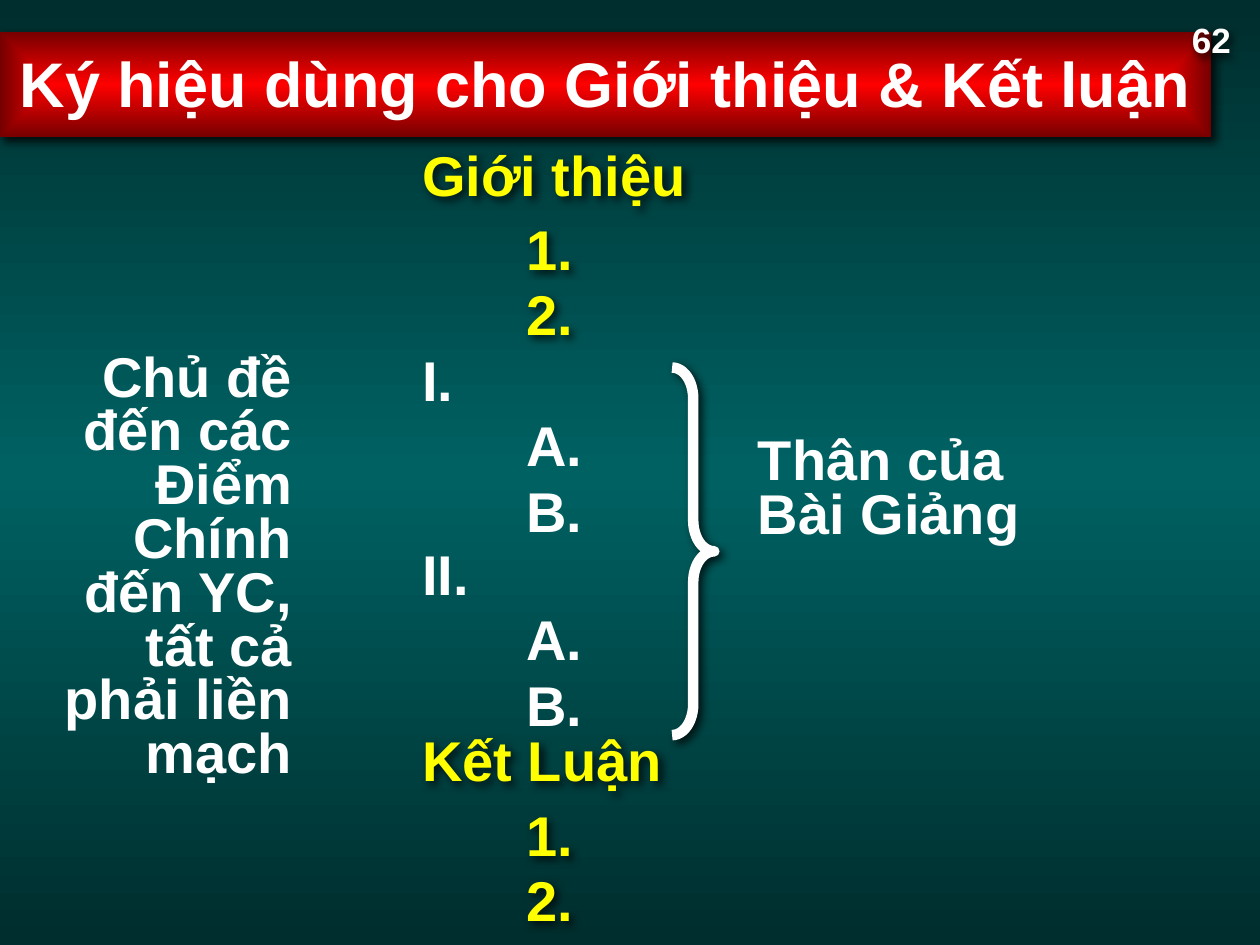
from dataclasses import dataclass

from pptx import Presentation
from pptx import util as u
from pptx.dml.color import RGBColor
from pptx.enum import shapes, text
from pptx.oxml import parse_xml
from pptx.oxml.ns import nsdecls


@dataclass
class Theme:
    font: str = "Arial"
    white: str = "FFFFFF"
    gold: str = "FFFF00"
    dark: str = "002D2D"
    teal: str = "006162"
    red: str = "FF0000"
    wine: str = "760000"
    gray: str = "808080"
    head: int = 36
    main: int = 32
    num: int = 20


look = Theme()
SHADE = (f'<a:effectLst {nsdecls("a")}><a:outerShdw blurRad="63500" dist="36000" dir="2700000">'
         '<a:srgbClr val="{}"><a:alpha val="75000"/></a:srgbClr></a:outerShdw></a:effectLst>')


def put(words, box, size=look.main, color=look.white, align="LEFT", line=0.8,
        hang=0, wrap=True, soft=False, edge=0.13):
    """Fill a shape with one bold paragraph; soft shades the shape, else the letters."""
    frame = box.text_frame
    frame.word_wrap = wrap
    frame.auto_size = text.MSO_AUTO_SIZE.NONE
    frame.vertical_anchor = text.MSO_ANCHOR.TOP
    frame.margin_left = frame.margin_right = u.Cm(0.25)
    frame.margin_top, frame.margin_bottom = u.Cm(edge), u.Cm(0.13)
    para = frame.paragraphs[0]
    para.alignment = text.PP_ALIGN[align]
    para.line_spacing = line
    para.space_before = u.Pt(0)
    if hang:
        props = para._p.get_or_add_pPr()
        props.set("marL", str(u.Cm(hang)))
        props.set("indent", str(-u.Cm(hang)))
    run = para.add_run()
    run.text = words
    run.font.size, run.font.bold = u.Pt(size), True
    run.font.color.rgb = RGBColor.from_string(color)
    if soft:
        box._element.spPr.append(parse_xml(SHADE.format("000000")))
    else:
        run._r.get_or_add_rPr().append(parse_xml(SHADE.format(look.gray)))
    run.font.name = look.font


def blend(fill, props, stops, mode):
    """Swap a plain fill for a gradient."""
    fill.solid()
    plain = props.find("{*}solidFill")
    marks = "".join(f'<a:gs pos="{at * 1000}"><a:srgbClr val="{tint}"/></a:gs>'
                    for at, tint in stops)
    props.replace(plain, parse_xml(
        f'<a:gradFill {nsdecls("a")} rotWithShape="1"><a:gsLst>{marks}</a:gsLst>{mode}</a:gradFill>'))


deck = Presentation()
deck.slide_width, deck.slide_height = u.Cm(25.4), u.Cm(19.05)
slide = deck.slides.add_slide(deck.slide_layouts[5])

# Background
back = slide.background.fill
blend(back, slide._element.cSld.find("{*}bg/{*}bgPr"),
      [(0, look.dark), (50, look.teal), (100, look.dark)], '<a:lin ang="5400000" scaled="1"/>')

# Title bar
title = slide.shapes.title
title.left, title.top, title.width, title.height = map(u.Cm, (0, 0.64, 24.41, 2.13))
blend(title.fill, title._element.spPr, [(0, look.red), (100, look.wine)],
      '<a:path path="shape"><a:fillToRect l="50000" t="50000" r="50000" b="50000"/></a:path>')
put("Ký hiệu dùng cho Giới thiệu & Kết luận", title, size=look.head,
    align="CENTER", line=1.0, soft=True, edge=0.25)

# Page number
num = slide.shapes.add_textbox(*map(u.Cm, (23.77, 0.25, 1.3, 1.12)))
put("62", num, size=look.num, align="CENTER", line=1.0, wrap=False, soft=True)

# Outline: heading, its points, colour, top, drop to first point, heading width
STEP = 1.32
groups = [
    ("Giới thiệu", ("1.", "2."), look.gold, 2.97, 1.48, 8.69),
    ("I.", ("A.", "B."), look.white, 7.09, STEP, 2.74),
    ("II.", ("A.", "B."), look.white, 11.0, STEP, 2.74),
    ("Kết Luận", ("1.", "2."), look.gold, 14.76, 1.5, 8.69),
]
for head, points, color, top, drop, wide in groups:
    rows = [(head, 8.26, top, wide)]
    rows += [(point, 10.36, top + drop + i * STEP, 2.97) for i, point in enumerate(points)]
    for words, left, high, width in rows:
        box = slide.shapes.add_textbox(*map(u.Cm, (left, high, width, 1.4)))
        put(words, box, color=color, hang=1.42, soft=color == look.gold)

# Brace around the body
brace = slide.shapes.add_shape(shapes.MSO_SHAPE.RIGHT_BRACE, *map(u.Cm, (13.55, 7.41, 0.85, 7.41)))
brace.adjustments[0], brace.adjustments[1] = 0.73, 0.5
brace.fill.background()
brace.line.color.rgb = RGBColor.from_string(look.white)
brace.line.width = u.Pt(6)
brace._element.spPr.append(parse_xml(SHADE.format("000000")))

# Side notes
body = slide.shapes.add_textbox(*map(u.Cm, (15.03, 8.69, 6.15, 2.44)))
put("Thân của Bài Giảng", body)
note = slide.shapes.add_textbox(*map(u.Cm, (0.64, 7.01, 5.5, 9.02)))
put("Chủ đề đến các Điểm Chính đến YC, tất cả phải liền mạch", note, align="RIGHT")

deck.save("out.pptx")
